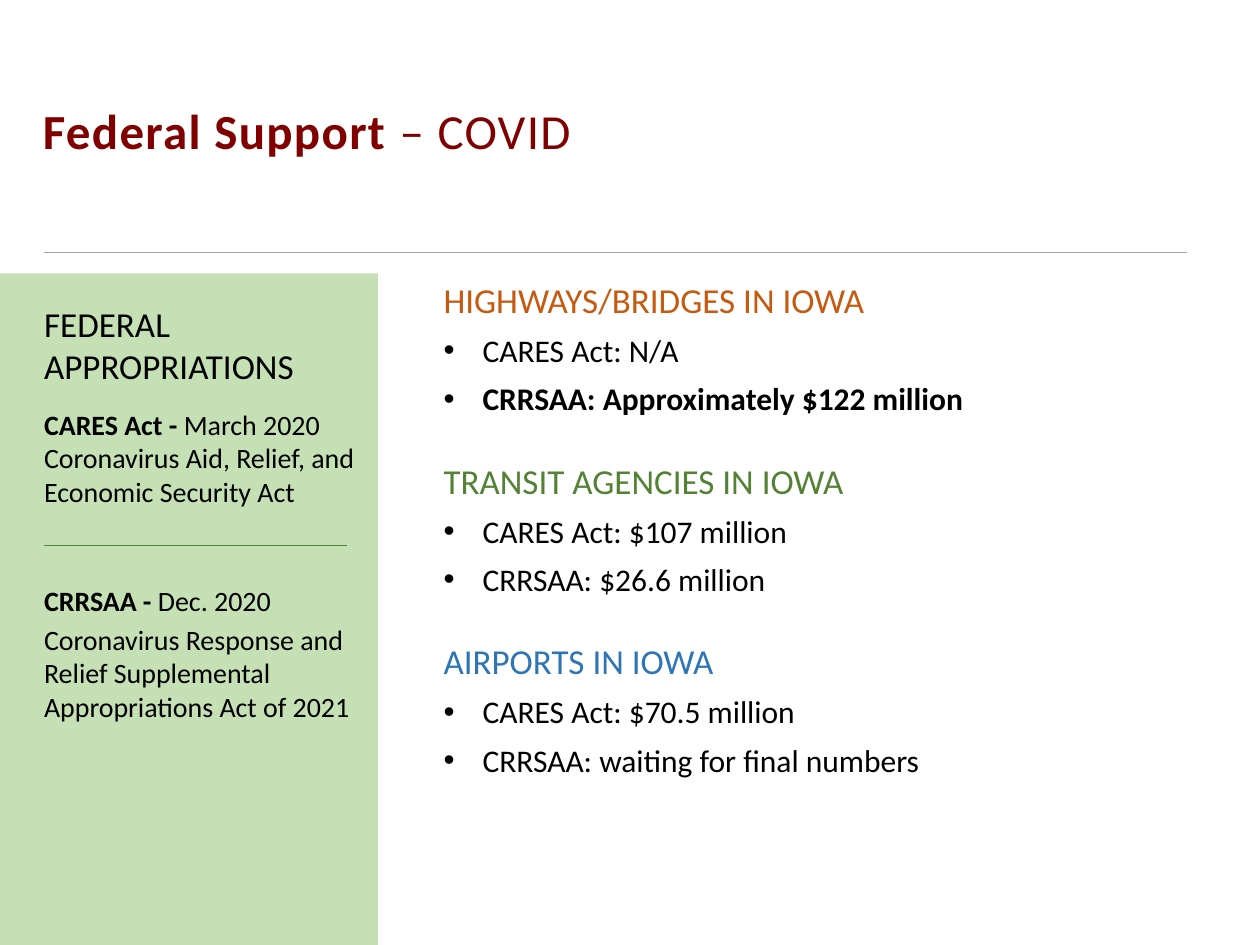
from lxml.etree import SubElement as Sub
from pptx import Presentation
from pptx.dml.color import RGBColor as Rgb
from pptx.enum.shapes import MSO_CONNECTOR as Conn, MSO_SHAPE as Shape
from pptx.enum.text import MSO_ANCHOR as Anchor, MSO_AUTO_SIZE as Fit, PP_ALIGN as Align
from pptx.oxml.ns import qn
from pptx.util import Inches, Pt

HUES = {
    "title": "800000", "text": "000000", "panel": "C5E0B4", "rule": "A5A5A5",
    "road": "C55A11", "transit": "548235", "air": "2E75B6",
}
FRAME = {"word_wrap": True, "auto_size": Fit.NONE, "vertical_anchor": Anchor.TOP}
FACTS = [
    ("HIGHWAYS/BRIDGES IN IOWA", "road",
     [("CARES Act: N/A", False), ("CRRSAA: Approximately $122 million", True)]),
    ("TRANSIT AGENCIES IN IOWA", "transit",
     [("CARES Act: $107 million", False), ("CRRSAA: $26.6 million", False)]),
    ("AIRPORTS IN IOWA", "air",
     [("CARES Act: $70.5 million", False), ("CRRSAA: waiting for final numbers", False)]),
]
ACTS = [
    ([("FEDERAL APPROPRIATIONS", False)], 20, 12),
    ([("CARES Act - ", True), ("March 2020", False)], 16, 0),
    ([("Coronavirus Aid, Relief, and Economic Security Act", False)], 16, 43),
    ([("CRRSAA - ", True), ("Dec. 2020", False)], 16, 3),
    ([("Coronavirus Response and Relief Supplemental Appropriations Act of 2021", False)], 16, 0),
]


def place(shape, box):
    """Move a placeholder to a box in inches and return its text frame."""
    for name, size in zip(("left", "top", "width", "height"), box):
        setattr(shape, name, Inches(size))
    for name, value in FRAME.items():
        setattr(shape.text_frame, name, value)
    return shape.text_frame


def write(frame, runs, size, after=0, hue="text", mark=False, track=0):
    """Add one paragraph of (text, bold) runs, with a bullet if marked."""
    para = frame.paragraphs[0]
    if para.runs:
        para = frame.add_paragraph()
    look = {"alignment": Align.LEFT, "space_before": Pt(0), "space_after": Pt(after)}
    for name, value in look.items():
        setattr(para, name, value)
    props = para._p.get_or_add_pPr()
    dent = Inches(0.31) if mark else 0
    props.set("marL", str(dent))
    props.set("indent", str(-dent))
    if mark:
        Sub(props, qn("a:buFont"), typeface="Arial")
        Sub(props, qn("a:buChar"), char="•")
    else:
        Sub(props, qn("a:buNone"))
    for text, bold in runs:
        run = para.add_run()
        run.text = text
        for name, value in {"name": "Calibri", "size": Pt(size), "bold": bold}.items():
            setattr(run.font, name, value)
        run.font.color.rgb = Rgb.from_string(HUES[hue])
        if track:
            run._r.get_or_add_rPr().set("spc", str(track))


def rule(slide, left, top, width, hue):
    """Draw a thin level line."""
    line = slide.shapes.add_connector(
        Conn.STRAIGHT, Inches(left), Inches(top), Inches(left + width), Inches(top))
    line.line.width = Pt(0.5)
    line.line.color.rgb = Rgb.from_string(HUES[hue])
    Sub(line._element.spPr, qn("a:effectLst"))


def head(slide, shape, left, top, width):
    """Set the title and the line below it."""
    frame = place(shape, (left - 0.11, top, width, 0.57))
    write(frame, [("Federal Support ", True), ("– COVID", False)], 28, hue="title", track=80)
    rule(slide, left, top + 1.25, 9.07, "rule")


def side(slide, shape, left, top, width, height):
    """Fill the green panel with the two acts."""
    panel = slide.shapes.add_shape(
        Shape.RECTANGLE, Inches(left), Inches(top), Inches(width), Inches(height))
    panel.shadow.inherit = False
    panel.fill.solid()
    panel.fill.fore_color.rgb = Rgb.from_string(HUES["panel"])
    panel.line.fill.background()
    slide.shapes._spTree.insert(2, panel._element)
    frame = place(shape, (left + 0.25, top + 0.18, width - 0.33, 3.48))
    for runs, size, after in ACTS:
        write(frame, runs, size, after)
    rule(slide, left + 0.35, top + 2.16, width - 0.6, "transit")


def facts(shape, box):
    """List the funds for each kind of transport."""
    frame = place(shape, box)
    for name, hue, items in FACTS:
        write(frame, [(name, False)], 20, 6, hue)
        for item in items:
            write(frame, [item], 18, 24 if item == items[-1] else 6, mark=True)


def main():
    """Build and save the slide."""
    deck = Presentation()
    deck.slide_width, deck.slide_height = Inches(10), Inches(7.5)
    slide = deck.slides.add_slide(deck.slide_layouts[3])
    title, left, right = slide.placeholders
    head(slide, title, 0.35, 0.75, 9.75)
    side(slide, left, 0, 2.17, 3, 5.33)
    facts(right, (3.42, 2.16, 5, 4.11))
    deck.save("out.pptx")


if __name__ == "__main__":
    main()
